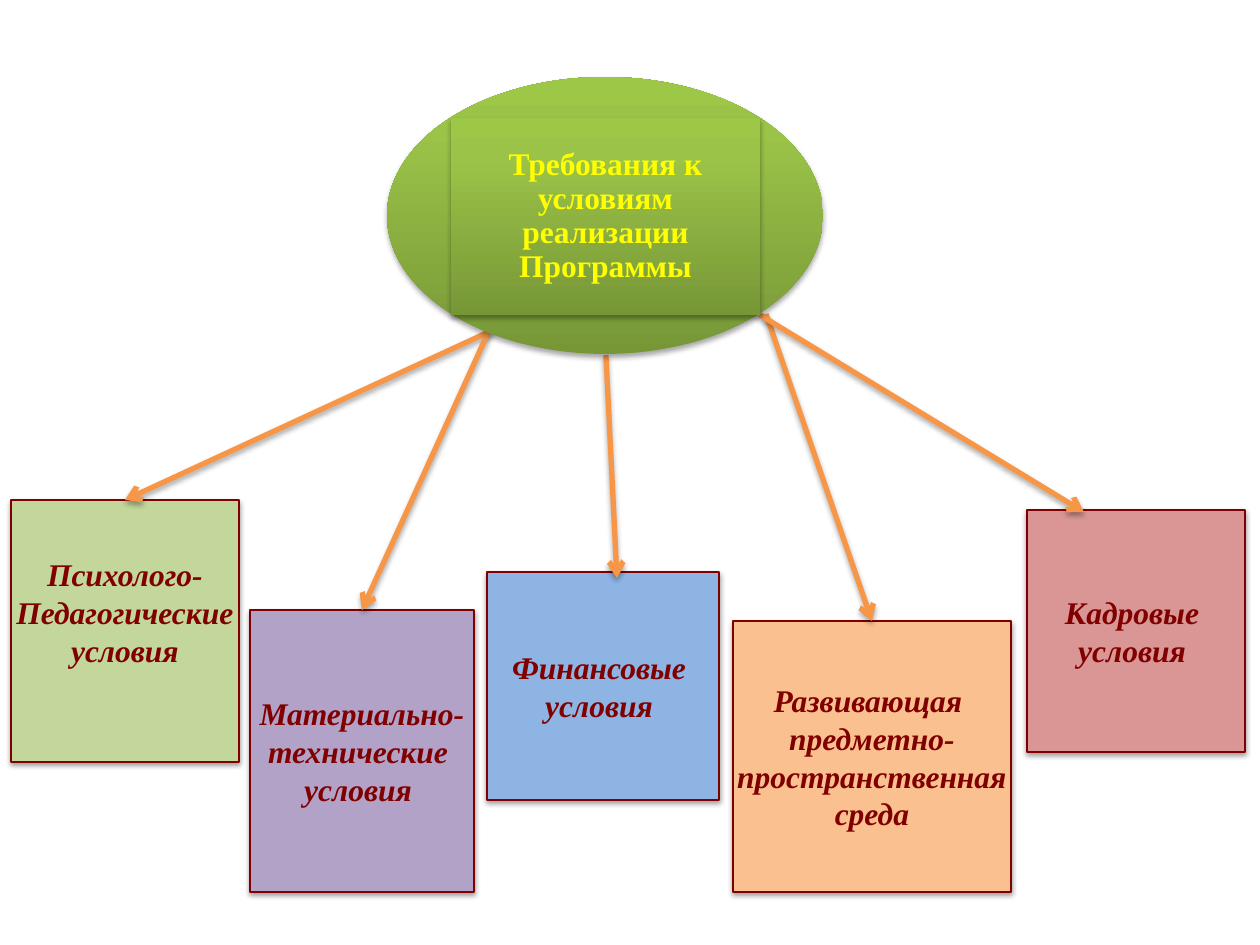
import pptx
import pptx.util
import pptx.dml.color
import pptx.enum.shapes
import pptx.enum.text
import pptx.oxml
import pptx.oxml.ns

PX = 914400 // 126
THEME = {
    "font": "Times New Roman", "size": 18,
    "border": "800000", "label": "800000", "arrow": "F79646", "heading": "FFFF00",
    "gradient": [(0, "779737"), (80, "9BC348"), (100, "9DC746")],
}
RGB = pptx.dml.color.RGBColor.from_string
SHAPES = pptx.enum.shapes.MSO_SHAPE
NS = pptx.oxml.ns.nsdecls("a")


def add_shadow(shape, opacity, distance):
    """Append a soft downward shadow; call it after fill and line are set."""
    shape._element.spPr.append(pptx.oxml.parse_xml(
        f'<a:effectLst {NS}><a:outerShdw blurRad="40000" dist="{distance}" dir="5400000" '
        f'rotWithShape="0"><a:srgbClr val="000000"><a:alpha val="{opacity}000"/></a:srgbClr>'
        '</a:outerShdw></a:effectLst>'))


def write_lines(shape, lines, color, frame_format, spacing=None, italic=False):
    frame = shape.text_frame
    for name, value in frame_format.items():
        setattr(frame, name, value)
    frame.vertical_anchor = pptx.enum.text.MSO_ANCHOR.MIDDLE
    frame.text = "\n".join(lines)
    font_format = {"name": THEME["font"], "size": pptx.util.Pt(THEME["size"]),
                   "bold": True, "italic": italic}
    for paragraph in frame.paragraphs:
        paragraph.alignment = pptx.enum.text.PP_ALIGN.CENTER
        paragraph.line_spacing = spacing
        for name, value in font_format.items():
            setattr(paragraph.font, name, value)
        paragraph.font.color.rgb = RGB(color)


deck = pptx.Presentation()
deck.slide_width, deck.slide_height = pptx.util.Inches(10), pptx.util.Inches(7.5)
slide = deck.slides.add_slide(deck.slide_layouts[6])

# Conditions: lines, fill, box, bottom inset
conditions = [
    (["Психолого-", "Педагогические", "условия"], "C3D69B", (11, 500, 228, 262), 44),
    (["Финансовые ", "условия "], "8EB4E3", (487, 572, 232, 228), 6),
    (["Материально-", "технические ", "условия "], "B3A2C7", (250, 610, 224, 282), 6),
    (["Развивающая ", "предметно-", "пространственная", "среда"], "FAC090",
     (733, 621, 278, 271), 6),
    (["Кадровые ", "условия "], "D99694", (1027, 510, 218, 242), 6),
]
condition_boxes = []
for lines, fill, box, inset in conditions:
    condition = slide.shapes.add_shape(SHAPES.RECTANGLE, *(v * PX for v in box))
    condition.fill.solid()
    condition.fill.fore_color.rgb = RGB(fill)
    condition.line.color.rgb = RGB(THEME["border"])
    condition.line.width = pptx.util.Pt(0.75)
    add_shadow(condition, 38, 20000)
    write_lines(condition, lines, THEME["label"],
                {"word_wrap": False, "margin_bottom": inset * PX}, italic=True)
    condition_boxes.append(condition)
psychological, financial, material, developing, staff = condition_boxes

# Arrows: start, end, box joined at its top middle
arrows = [
    ((493, 330), (125, 500), psychological),
    ((766, 314), (872, 621), developing),
    ((488, 333), (362, 610), material),
    ((606, 355), (617, 578), None),
    ((760, 315), (1084, 512), None),
]
for start, end, target in arrows:
    arrow = slide.shapes.add_connector(
        pptx.enum.shapes.MSO_CONNECTOR.STRAIGHT, *(v * PX for v in start + end))
    if target is not None:
        arrow.end_connect(target, 0)
    arrow.line.color.rgb = RGB(THEME["arrow"])
    arrow.line.width = pptx.util.Pt(3)
    arrow.line._get_or_add_ln().append(pptx.oxml.parse_xml(f'<a:tailEnd {NS} type="arrow"/>'))
    add_shadow(arrow, 35, 23000)

# Central requirement: ellipse with its text panel
requirement = slide.shapes.add_group_shape()
stops = "".join(f'<a:gs pos="{position}000"><a:srgbClr val="{color}"/></a:gs>'
                for position, color in THEME["gradient"])
for kind, box in [(SHAPES.OVAL, (387, 77, 436, 277)), (SHAPES.RECTANGLE, (451, 118, 309, 197))]:
    panel = requirement.shapes.add_shape(kind, *(v * PX for v in box))
    panel.line.fill.background()
    panel._element.spPr.prstGeom.addnext(pptx.oxml.parse_xml(
        f'<a:gradFill {NS} rotWithShape="1"><a:gsLst>{stops}</a:gsLst>'
        '<a:lin ang="16200000" scaled="0"/></a:gradFill>'))
    add_shadow(panel, 35, 23000)
sides = ("left", "top", "right", "bottom")
write_lines(panel, ["Требования к условиям реализации Программы"], THEME["heading"],
            {"word_wrap": True, **{f"margin_{side}": 3 * PX for side in sides}}, spacing=0.9)

deck.save("out.pptx")
